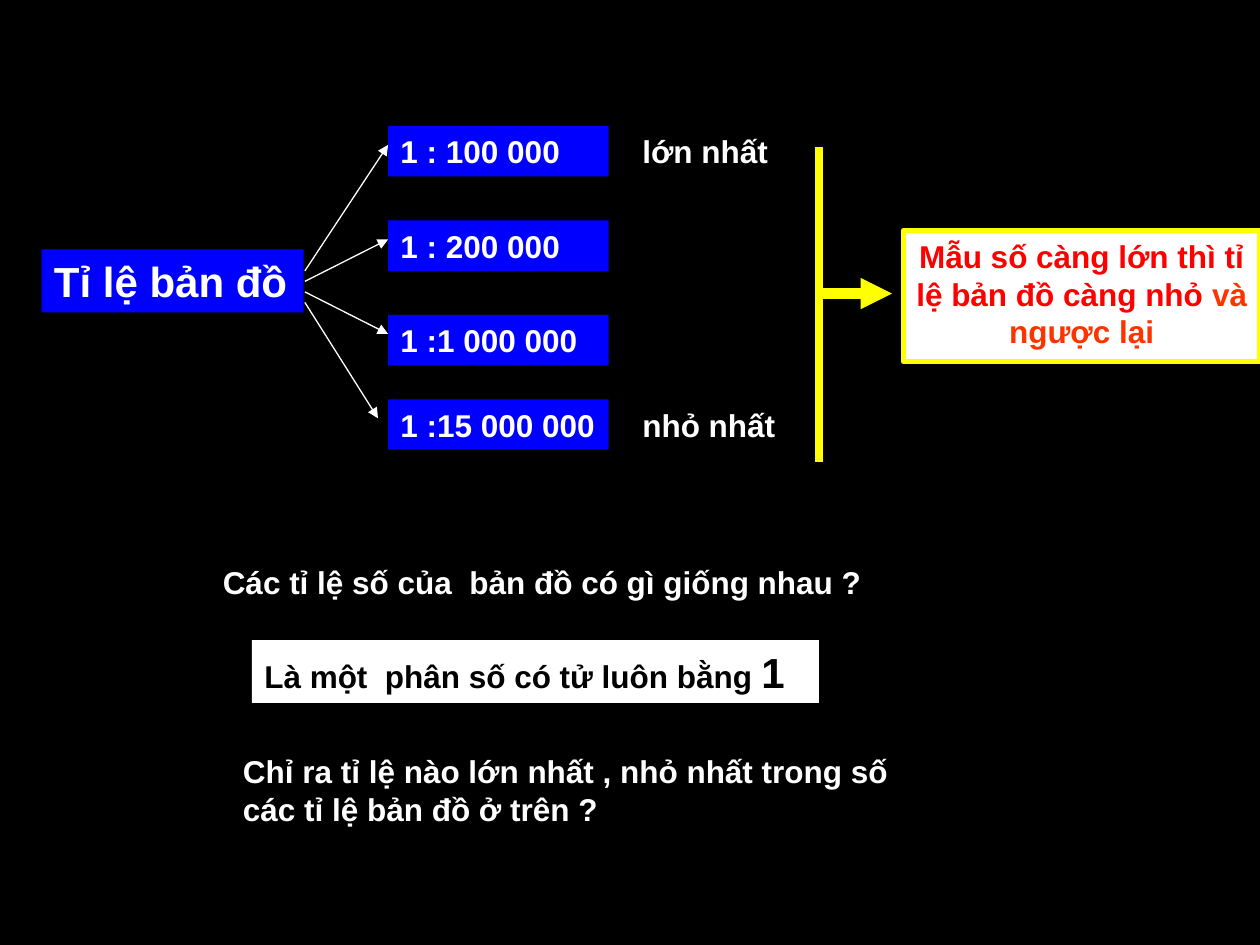
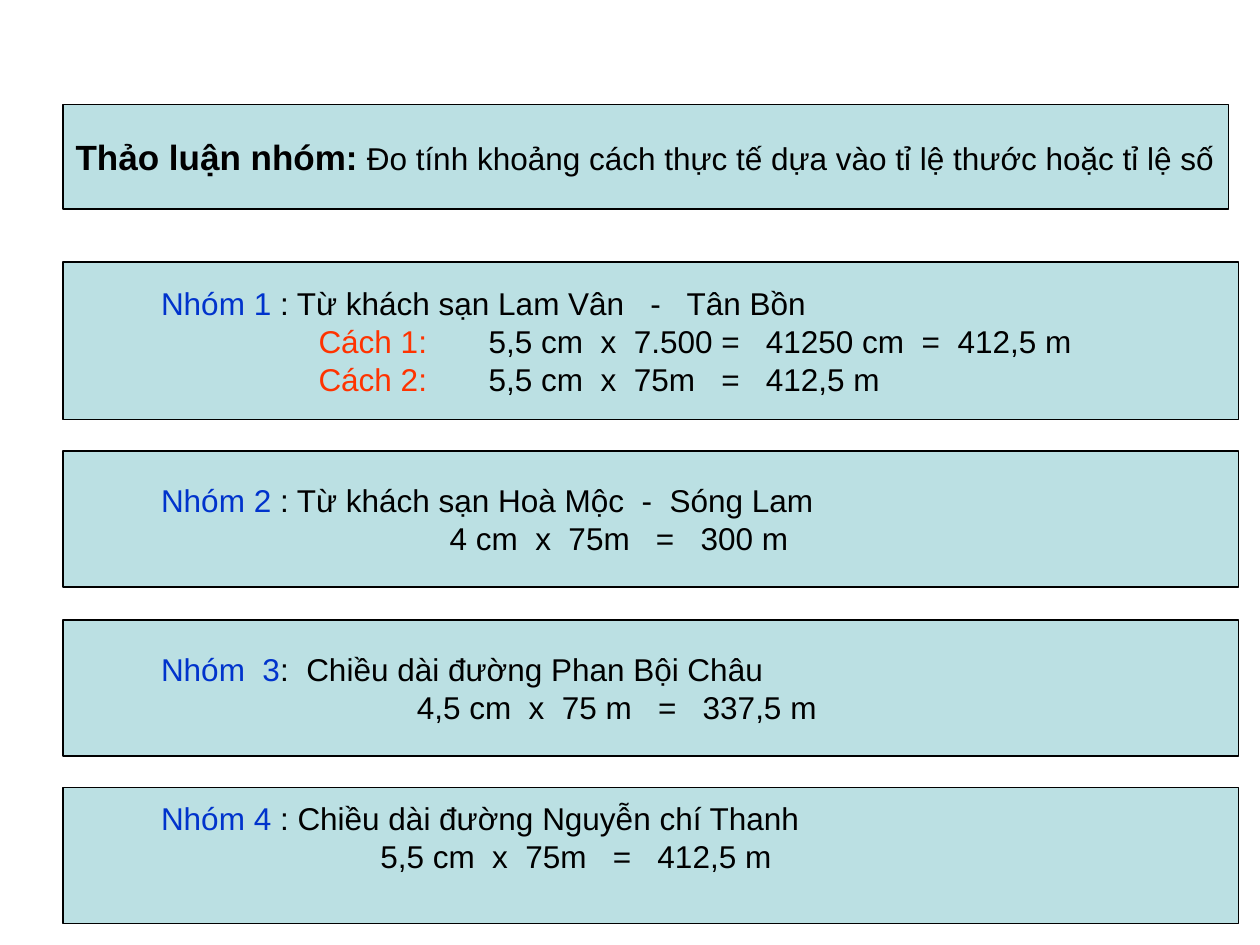
"""Build two slides on map scales and measuring real distances."""
import lxml.etree
import pptx
import pptx.dml.color
import pptx.enum.shapes
import pptx.enum.text
import pptx.oxml.ns
import pptx.util

Inches = pptx.util.Inches
Align = pptx.enum.text.PP_ALIGN
Anchor = pptx.enum.text.MSO_ANCHOR
BLANK, TITLE_ONLY = 6, 5
COLORS = {
    "black": "000000", "white": "FFFFFF", "blue": "0000FF", "yellow": "FFFF00",
    "red": "FF0000", "orange": "FF3300", "label": "0033CC", "panel": "BBE0E3",
}


def color(name):
    return pptx.dml.color.RGBColor.from_string(COLORS[name])


def span(text, **style):
    return text, style


def write(para, spans, indent=0, hang=0, align=Align.LEFT, **style):
    para.alignment = align
    para.space_before = pptx.util.Pt(0)
    properties = para._p.get_or_add_pPr()
    properties.set("marL", str(Inches(indent + hang)))
    properties.set("indent", str(Inches(-hang)))
    for text, own in spans:
        look = {"size": 18, "bold": False, "ink": "black", **style, **own}
        run = para.add_run()
        run.text = text
        run.font.name = "Arial"
        run.font.size = pptx.util.Pt(look["size"])
        run.font.bold = look["bold"]
        run.font.color.rgb = color(look["ink"])


class Deck:
    def __init__(self):
        self.deck = pptx.Presentation()
        self.deck.slide_width, self.deck.slide_height = Inches(10), Inches(7.5)

    def add_page(self, layout, background):
        self.page = self.deck.slides.add_slide(self.deck.slide_layouts[layout])
        self.page.background.fill.solid()
        self.page.background.fill.fore_color.rgb = color(background)

    def decorate(self, box, fill, line=None, weight=0.75):
        box.fill.solid()
        box.fill.fore_color.rgb = color(fill)
        if line:
            box.line.color.rgb = color(line)
            box.line.width = pptx.util.Pt(weight)
        else:
            box.line.fill.background()

    def fill_text(self, box, paras, anchor=Anchor.TOP, wrap=True, bottom=0.05, **style):
        frame = box.text_frame
        frame.word_wrap = wrap
        frame.auto_size = pptx.enum.text.MSO_AUTO_SIZE.NONE
        frame.vertical_anchor = anchor
        frame.margin_bottom = Inches(bottom)
        for index, (spans, layout) in enumerate(paras):
            para = frame.add_paragraph() if index else frame.paragraphs[0]
            write(para, spans, **{**style, **layout})

    def add_box(self, place, paras, fill, line=None, weight=0.75, **style):
        box = self.page.shapes.add_shape(
            pptx.enum.shapes.MSO_SHAPE.RECTANGLE, *map(Inches, place))
        box.shadow.inherit = False
        self.decorate(box, fill, line, weight)
        self.fill_text(box, paras, **style)

    def add_text(self, place, text, **style):
        box = self.page.shapes.add_textbox(*map(Inches, place))
        self.fill_text(box, [([span(text)], {})], **style)

    def add_title(self, place, spans, **style):
        title = self.page.shapes.title
        title.left, title.top, title.width, title.height = map(Inches, place)
        self.decorate(title, "panel", "black")
        self.fill_text(title, [(spans, {})], anchor=Anchor.MIDDLE, wrap=False, **style)

    def add_line(self, start, end, ink, weight, arrow=False):
        line = self.page.shapes.add_connector(
            pptx.enum.shapes.MSO_CONNECTOR.STRAIGHT, *map(Inches, start + end))
        line.line.color.rgb = color(ink)
        line.line.width = pptx.util.Pt(weight)
        if arrow:
            lxml.etree.SubElement(line.line._get_or_add_ln(),
                                  pptx.oxml.ns.qn("a:tailEnd"), type="triangle")
        lxml.etree.SubElement(line._element.spPr, pptx.oxml.ns.qn("a:effectLst"))


def build_scales(deck):
    deck.add_page(BLANK, "black")
    light = {"ink": "white", "bold": True}
    scales = [("1 : 100 000", 1, 3.08), ("1 : 200 000", 1.75, 3.08),
              ("1 :1 000 000", 2.5, 3.08), ("1 :15 000 000", 3.17, 3)]
    deck.add_box((0.33, 1.98, 2.08, 0.5), [([span("Tỉ lệ bản đồ")], {})],
                 "blue", size=24, **light)
    for index, (scale, top, tip) in enumerate(scales):
        deck.add_box((3.08, top, 1.75, 0.4), [([span(scale)], {})], "blue", **light)
        deck.add_line((2.42, 2.15 + index / 12), (tip, top + 0.15), "white", 0.75, arrow=True)

    deck.add_text((5, 1, 1.33, 0.51), "lớn nhất", **light)
    deck.add_text((5, 3.17, 1.26, 0.4), "nhỏ nhất", **light)
    deck.add_text((1.67, 4.42, 5.5, 0.4), "Các tỉ lệ số của  bản đồ có gì giống nhau ?", **light)
    answer = [span("Là một  phân số có tử luôn bằng "), span("1", size=24)]
    deck.add_box((2, 5.08, 4.5, 0.5), [(answer, {})], "white", bold=True)
    deck.add_text((1.83, 5.92, 5.5, 0.81),
                  "Chỉ ra tỉ lệ nào lớn nhất , nhỏ nhất trong số các tỉ lệ bản đồ ở trên ?",
                  **light)

    rule = [span("Mẫu số càng lớn thì tỉ lệ bản đồ càng nhỏ ", ink="red"),
            span("và ngược lại", ink="orange")]
    deck.add_box((7.17, 1.83, 2.83, 1.04), [(rule, {})], "white", "yellow", 3,
                 bold=True, align=Align.CENTER)
    deck.add_line((6.5, 1.17), (6.5, 3.67), "yellow", 4.5)
    deck.add_line((6.5, 2.33), (7.08, 2.33), "yellow", 6, arrow=True)


def build_groups(deck):
    deck.add_page(TITLE_ONLY, "white")
    deck.add_title((0.5, 0.83, 9.25, 0.83), [
        span("Thảo luận nhóm:", size=20, bold=True),
        span(" Đo tính khoảng cách thực tế dựa vào tỉ lệ thước hoặc tỉ lệ số")])

    def method(name, sum_text):
        return [span(name, ink="orange"), span("\t" + sum_text)], {"indent": 1.93, "hang": 1.35}

    def result(sum_text, indent):
        return [span(sum_text)], {"indent": indent}

    groups = [
        ("Nhóm 1", " : Từ khách sạn Lam Vân   -   Tân Bồn", 2.08, 1.25, 0.05,
         [method("Cách 1:", "5,5 cm  x  7.500 =   41250 cm  =  412,5 m"),
          method("Cách 2:", "5,5 cm  x  75m   =   412,5 m")]),
        ("Nhóm 2", " : Từ khách sạn Hoà Mộc  -  Sóng Lam", 3.58, 1.08, 0.05,
         [result("4 cm  x  75m   =   300 m", 2.97)]),
        ("Nhóm  3", ":  Chiều dài đường Phan Bội Châu", 4.92, 1.08, 0.05,
         [result("4,5 cm  x  75 m   =   337,5 m", 2.71)]),
        ("Nhóm 4", " : Chiều dài đường Nguyễn chí Thanh", 6.25, 1.08, 0.35,
         [result("5,5 cm  x  75m   =   412,5 m", 2.42)]),
    ]
    for name, task, top, height, bottom, sums in groups:
        heading = [span(name, ink="label"), span(task)], {"indent": 0.68}
        deck.add_box((0.5, top, 9.33, height), [heading, *sums], "panel", "black",
                     anchor=Anchor.MIDDLE, bottom=bottom)


def main():
    deck = Deck()
    build_scales(deck)
    build_groups(deck)
    deck.deck.save("out.pptx")


if __name__ == "__main__":
    main()
